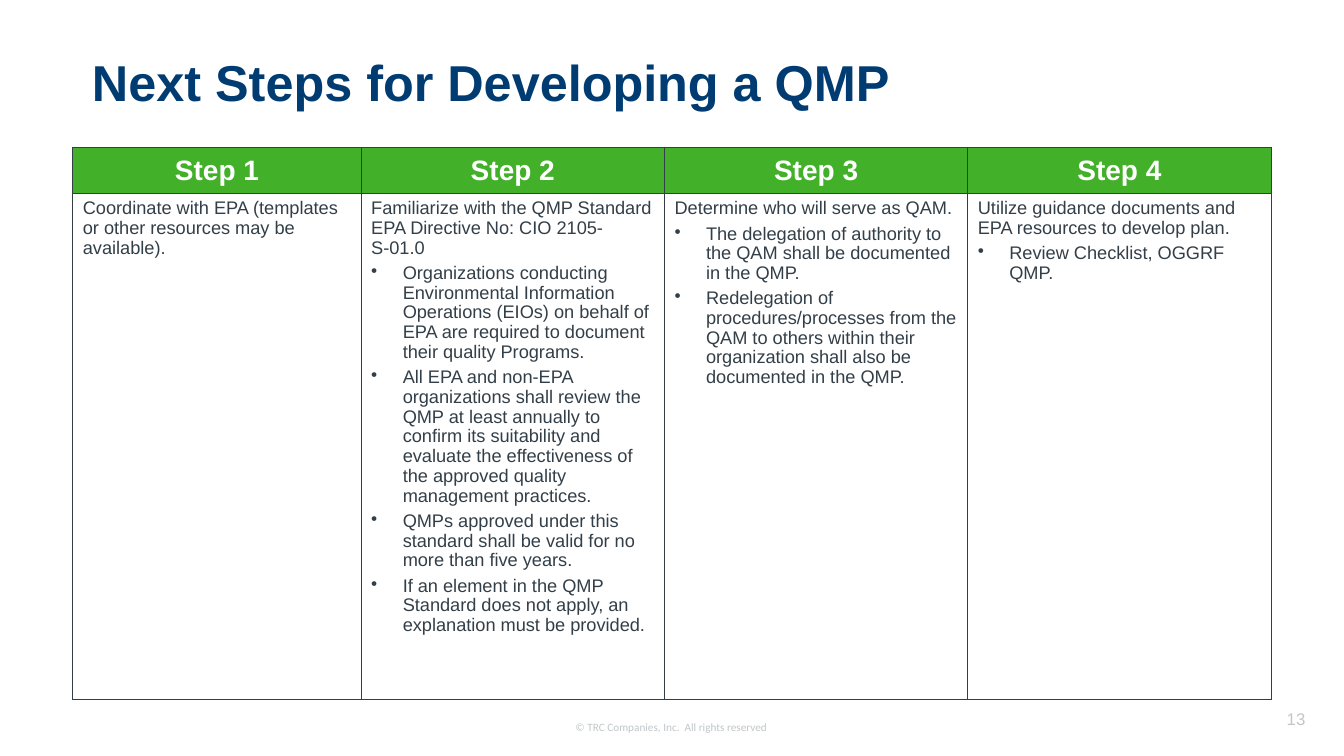
from pptx import Presentation
from pptx.dml.color import RGBColor
from pptx.enum.text import MSO_ANCHOR, MSO_AUTO_SIZE, PP_ALIGN
from pptx.oxml.ns import qn
from pptx.util import Pt
from lxml.etree import SubElement

NAVY, GREEN, SLATE, GREY, WHITE = "003C71", "43B02A", "333F48", "C1C6C8", "FFFFFF"

STEPS = [
    ("Step 1", "Coordinate with EPA (templates or other resources may be available).", []),
    ("Step 2", "Familiarize with the QMP Standard EPA Directive No: CIO 2105-S-01.0", [
        "Organizations conducting Environmental Information Operations (EIOs) on behalf of "
        "EPA are required to document their quality Programs.",
        "All EPA and non-EPA organizations shall review the QMP at least annually to confirm "
        "its suitability and evaluate the effectiveness of the approved quality management "
        "practices.",
        "QMPs approved under this standard shall be valid for no more than five years.",
        "If an element in the QMP Standard does not apply, an explanation must be provided.",
    ]),
    ("Step 3", "Determine who will serve as QAM.", [
        "The delegation of authority to the QAM shall be documented in the QMP.",
        "Redelegation of procedures/processes from the QAM to others within their "
        "organization shall also be documented in the QMP.",
    ]),
    ("Step 4", "Utilize guidance documents and EPA resources to develop plan.", [
        "Review Checklist, OGGRF QMP.",
    ]),
]


def color(code):
    """Turn a hex string into a colour."""
    return RGBColor.from_string(code)


def write(para, text, size=13, font="Arial", ink=SLATE, bold=False,
          align=PP_ALIGN.LEFT, after=0, line=1.0, bullet=False):
    """Fill a paragraph with formatted text."""
    if bullet:
        props = para._p.get_or_add_pPr()
        props.set("marL", str(Pt(22.5)))
        props.set("indent", str(-Pt(22.5)))
        SubElement(props, qn("a:buChar"), char="•")
    para.alignment = align
    para.space_before, para.space_after = Pt(0), Pt(after)
    para.line_spacing = line
    run = para.add_run()
    run.text = text
    run.font.size, run.font.name, run.font.bold = Pt(size), font, bold
    run.font.color.rgb = color(ink)


def add_title(slide, text, left, top, width, height):
    """Place the slide title in its box."""
    title = slide.shapes.title
    title.left, title.top, title.width, title.height = map(Pt, (left, top, width, height))
    frame = title.text_frame
    frame.auto_size = MSO_AUTO_SIZE.NONE
    frame.vertical_anchor = MSO_ANCHOR.BOTTOM
    write(frame.paragraphs[0], text, size=36, ink=NAVY, bold=True)


def add_label(slide, text, left, top, width, height, wrap=True, **style):
    """Place a small line of text in its box."""
    frame = slide.shapes.add_textbox(*map(Pt, (left, top, width, height))).text_frame
    frame.word_wrap = wrap
    frame.vertical_anchor = MSO_ANCHOR.MIDDLE
    write(frame.paragraphs[0], text, ink=GREY, **style)


def dress(cell, fill):
    """Give a cell its borders and fill."""
    props = cell._tc.get_or_add_tcPr()
    for side in ("lnL", "lnR", "lnT", "lnB"):
        edge = SubElement(props, qn("a:" + side), w=str(Pt(1)))
        SubElement(SubElement(edge, qn("a:solidFill")), qn("a:srgbClr"), val=SLATE)
    cell.fill.solid()
    cell.fill.fore_color.rgb = color(fill)


def add_steps(slide, steps, left, top, width, height):
    """Build the table with one column for each step."""
    first, head = 206, 33
    rest = (width - first) / (len(steps) - 1)
    table = slide.shapes.add_table(2, len(steps), *map(Pt, (left, top, width, height))).table
    table.rows[0].height, table.rows[1].height = Pt(head), Pt(height - head)
    for col, (name, lead, points) in enumerate(steps):
        table.columns[col].width = Pt(rest if col else first)
        top_cell, body = table.cell(0, col), table.cell(1, col)
        dress(top_cell, GREEN)
        dress(body, WHITE)
        top_cell.vertical_anchor = MSO_ANCHOR.MIDDLE
        write(top_cell.text_frame.paragraphs[0], name, size=20, ink=WHITE,
              bold=True, align=PP_ALIGN.CENTER)
        frame = body.text_frame
        write(frame.paragraphs[0], lead, after=4, line=0.97)
        for point in points:
            write(frame.add_paragraph(), point, after=4, line=0.97, bullet=True)


def main():
    """Build and save the slide."""
    deck = Presentation()
    deck.slide_width, deck.slide_height = Pt(960), Pt(540)
    slide = deck.slides.add_slide(deck.slide_layouts[5])
    add_label(slide, "© TRC Companies, Inc.  All rights reserved", 404, 511, 153, 17,
              wrap=False, size=8, font="Calibri")
    add_title(slide, "Next Steps for Developing a QMP", 58.5, 47.5, 679, 36)
    add_label(slide, "13", 745, 499, 194.5, 29, size=12, align=PP_ALIGN.RIGHT)
    add_steps(slide, STEPS, 52, 105.5, 856, 394)
    deck.save("out.pptx")


if __name__ == "__main__":
    main()
